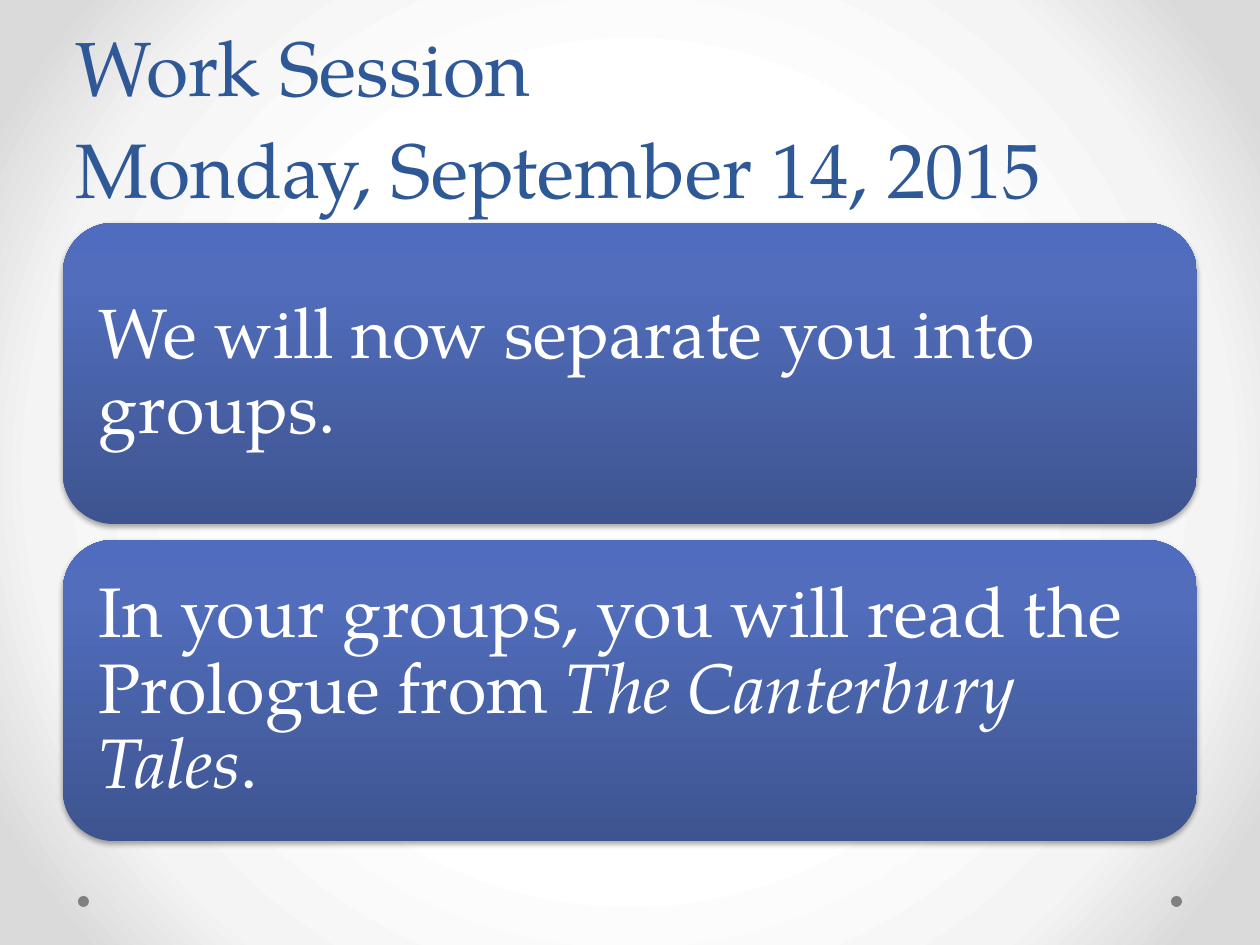
from lxml.etree import SubElement as Sub
from pptx import Presentation
from pptx.dml.color import RGBColor as RGB
from pptx.enum.shapes import MSO_SHAPE as Shp
from pptx.enum.text import MSO_ANCHOR as Anc, PP_ALIGN as Al
from pptx.oxml.ns import qn
from pptx.util import Emu, Pt

# Content: each line is a list of (text, italic) runs
TITLE = [[("Work Session", False)], [("Monday, September 14, 2015", False)]]
STEPS = [
    [[("We will now separate you into groups.", False)]],
    [[("In your groups, you will read the Prologue from ", False),
      ("The Canterbury Tales", True), (".", False)]],
]

FONT = "TeX Gyre Pagella"
NAVY, WHITE = RGB(0x2F, 0x58, 0x97), RGB(255, 255, 255)
GRAY, BLACK = RGB(0x80, 0x80, 0x80), RGB(0, 0, 0)
BACK = [(50, WHITE), (76, RGB(0xF4, 0xF4, 0xF4)), (92, RGB(0xDA, 0xDA, 0xDA))]
BLUES = [(0, RGB(0x3E, 0x54, 0x90)), (80, RGB(0x51, 0x6D, 0xBB)),
         (100, RGB(0x4F, 0x6C, 0xBE))]

# Layout in px
WIDE, HIGH = 1260, 945
LEFT, TOP, BOX, GAP = 63, 223, 301, 16
SPAN = WIDE - 2 * LEFT
DOT, DOT_X, DOT_Y = 11, 78, 896


def px(n):
    return Emu(round(n * 914400 / 126))


def stops(fill, marks):
    """Start a gradient, set its stops and return its element."""
    fill.gradient()
    grad = fill._fill._gradFill
    for old in list(grad):
        grad.remove(old)
    row = Sub(grad, qn("a:gsLst"))
    for pos, color in marks:
        gs = Sub(row, qn("a:gs"), pos=str(pos * 1000))
        Sub(gs, qn("a:srgbClr"), val=str(color))
    return grad


def shade(shape):
    """Give the shape a soft shadow straight below."""
    shape.shadow.inherit = False
    fx = shape._element.spPr.find(qn("a:effectLst"))
    drop = Sub(fx, qn("a:outerShdw"), blurRad=str(Pt(3.1)), dist=str(Pt(1.8)),
               dir="5400000", rotWithShape="0")
    tone = Sub(drop, qn("a:srgbClr"), val=str(BLACK))
    Sub(tone, qn("a:alpha"), val="35000")


def write(shape, lines, size, color, space, anchor, pad=None):
    frame = shape.text_frame
    frame.word_wrap = True
    frame.vertical_anchor = anchor
    if pad is not None:
        frame.margin_left = frame.margin_right = px(pad)
        frame.margin_top = frame.margin_bottom = px(pad)
    para = frame.paragraphs[0]
    para.alignment = Al.LEFT
    para.line_spacing = space
    for i, line in enumerate(lines):
        if i:
            para.add_line_break()
        for text, slant in line:
            run = para.add_run()
            run.text = text
            font = run.font
            font.name, font.size, font.italic = FONT, Pt(size), slant
            font.color.rgb = color


deck = Presentation()
deck.slide_width, deck.slide_height = px(WIDE), px(HIGH)
slide = deck.slides.add_slide(deck.slide_layouts[6])
shapes = slide.shapes

# Background
glow = stops(slide.background.fill, BACK)
ring = Sub(glow, qn("a:path"))
ring.set("path", "circle")
Sub(ring, qn("a:fillToRect"), l="50000", t="50000", r="50000", b="50000")

# Corner dots
for x in (WIDE - DOT_X - DOT, DOT_X):
    dot = shapes.add_shape(Shp.OVAL, px(x), px(DOT_Y), px(DOT), px(DOT))
    dot.shadow.inherit = False
    dot.fill.solid()
    dot.fill.fore_color.rgb = GRAY
    dot.line.fill.background()

# Title
head = shapes.add_textbox(px(LEFT), px(0), px(SPAN), px(220))
write(head, TITLE, 44, NAVY, Pt(58), Anc.BOTTOM)

# Steps
for i, step in enumerate(STEPS):
    y = TOP + i * (BOX + GAP)
    card = shapes.add_shape(Shp.ROUNDED_RECTANGLE,
                            px(LEFT), px(y), px(SPAN), px(BOX))
    Sub(stops(card.fill, BLUES), qn("a:lin"), ang="16200000", scaled="0")
    card.line.fill.background()
    shade(card)
    write(card, step, 40, WHITE, 0.9, Anc.MIDDLE, pad=21)

deck.save("out.pptx")
